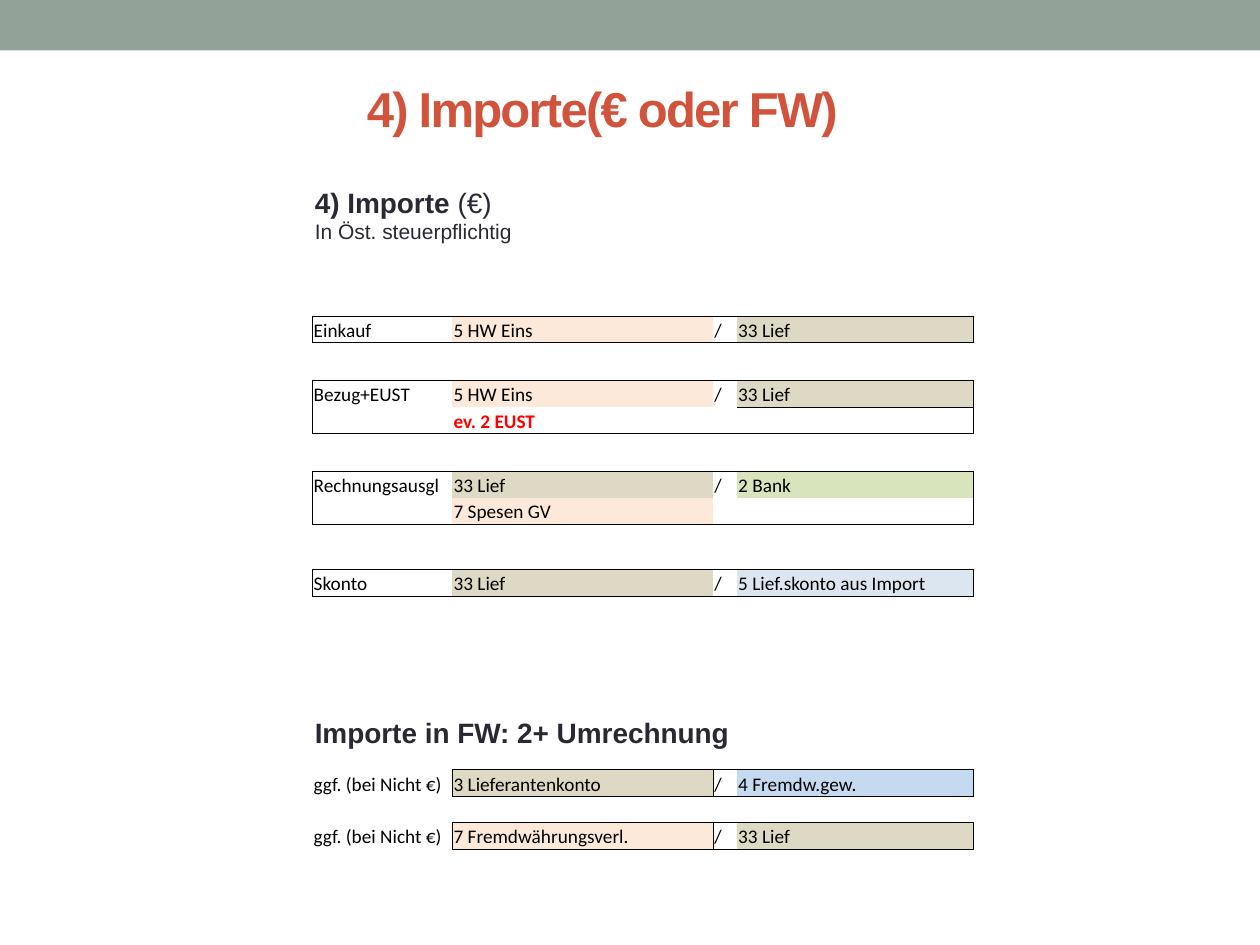
from dataclasses import dataclass

import lxml.etree
import pptx
import pptx.dml.color
import pptx.enum.shapes
import pptx.enum.text
import pptx.oxml.ns
import pptx.util

Inches = pptx.util.Inches
RGBColor = pptx.dml.color.RGBColor
qn = pptx.oxml.ns.qn

SAGE = RGBColor(0x93, 0xA2, 0x99)
RUST = RGBColor(0xD2, 0x53, 0x3C)
INK = RGBColor(0x29, 0x29, 0x34)
BLACK = RGBColor(0, 0, 0)
RED = RGBColor(0xFF, 0, 0)
PEACH = RGBColor(0xFD, 0xE9, 0xD9)
SAND = RGBColor(0xDD, 0xD9, 0xC4)
GREEN = RGBColor(0xD8, 0xE4, 0xBC)
PALE_BLUE = RGBColor(0xDC, 0xE6, 0xF1)
BLUE = RGBColor(0xC5, 0xD9, 0xF1)

COLUMNS = (1.11, 2.07, 0.19, 1.88)
ROW_HEIGHT = 0.21
TABLE_LEFT = 2.48
NO_STYLE = "{2D5ABB26-0587-4C30-8999-92F81FD0307C}"


@dataclass
class Entry:
    text: str = ""
    fill: RGBColor | None = None
    color: RGBColor = BLACK
    bold: bool = False
    underline: bool = False


@dataclass
class Box:
    first_row: int
    last_row: int
    first_col: int = 0

    def sides(self, row: int, col: int) -> set[str]:
        if not self.first_row <= row <= self.last_row or col < self.first_col:
            return set()
        edges = {
            "L": col == self.first_col,
            "R": col == len(COLUMNS) - 1,
            "T": row == self.first_row,
            "B": row == self.last_row,
        }
        return {side for side, on_edge in edges.items() if on_edge}


@dataclass
class Posting:
    top: float
    rows: list[list[Entry]]
    boxes: list[Box]


def booking(label: str, debit: Entry, credit: Entry) -> list[Entry]:
    return [Entry(label), debit, Entry("/"), credit]


def second_line(debit: Entry) -> list[Entry]:
    return [Entry(), debit, Entry(), Entry()]


SUPPLIER = Entry("33 Lief", SAND)
PURCHASE = Entry("5 HW Eins", PEACH)
FOREIGN = "ggf. (bei Nicht €)"

POSTINGS = [
    Posting(2.51, [booking("Einkauf", PURCHASE, SUPPLIER)], [Box(0, 0)]),
    Posting(3.02, [
        booking("Bezug+EUST", PURCHASE, Entry("33 Lief", SAND, underline=True)),
        second_line(Entry("ev. 2 EUST", color=RED, bold=True)),
    ], [Box(0, 1)]),
    Posting(3.74, [
        booking("Rechnungsausgl", SUPPLIER, Entry("2 Bank", GREEN)),
        second_line(Entry("7 Spesen GV", PEACH)),
    ], [Box(0, 1)]),
    Posting(4.52, [
        booking("Skonto", SUPPLIER, Entry("5 Lief.skonto aus Import", PALE_BLUE)),
    ], [Box(0, 0)]),
    Posting(6.11, [
        booking(FOREIGN, Entry("3 Lieferantenkonto", SAND), Entry("4 Fremdw.gew.", BLUE)),
        second_line(Entry()),
        booking(FOREIGN, Entry("7 Fremdwährungsverl.", PEACH), SUPPLIER),
    ], [Box(0, 0, 1), Box(2, 2, 1)]),
]


def write(p, text: str, *, size: float, color: RGBColor = INK, bold: bool = False,
          font: str = "Arial", spacing: int = 0) -> None:
    if not text:
        lxml.etree.SubElement(p._p, qn("a:endParaRPr"), sz=str(int(size * 100)))
        return
    r = p.add_run()
    r.text = text
    r.font.name = font
    r.font.size = pptx.util.Pt(size)
    r.font.bold = bold
    r.font.color.rgb = color
    if spacing:
        r.font._element.set("spc", str(spacing))


def add_box(s, left: float, top: float, width: float, height: float, wrap: bool = True):
    sp = s.shapes.add_textbox(Inches(left), Inches(top), Inches(width), Inches(height))
    tf = sp.text_frame
    tf.word_wrap = wrap
    return tf


def draw_borders(cell, sides: set[str]) -> None:
    tc_pr = cell._tc.get_or_add_tcPr()
    for side in "LRTB":
        if side in sides:
            line = lxml.etree.SubElement(tc_pr, qn(f"a:ln{side}"), w=str(pptx.util.Pt(0.5)))
            fill = lxml.etree.SubElement(line, qn("a:solidFill"))
            lxml.etree.SubElement(fill, qn("a:srgbClr"), val=str(BLACK))


def fill_cell(cell, entry: Entry, sides: set[str]) -> None:
    draw_borders(cell, sides)
    if entry.fill is None:
        cell.fill.background()
    else:
        cell.fill.solid()
        cell.fill.fore_color.rgb = entry.fill
    cell.margin_left = cell.margin_right = cell.margin_top = Inches(0.01)
    cell.margin_bottom = Inches(0)
    cell.vertical_anchor = pptx.enum.text.MSO_ANCHOR.BOTTOM
    write(cell.text_frame.paragraphs[0], entry.text, size=11, color=entry.color,
          bold=entry.bold, font="Calibri")


def add_posting(s, posting: Posting) -> None:
    count = len(posting.rows)
    table = s.shapes.add_table(
        count, len(COLUMNS), Inches(TABLE_LEFT), Inches(posting.top),
        Inches(sum(COLUMNS)), Inches(ROW_HEIGHT * count)).table
    table.first_row = table.horz_banding = False
    table._tbl.tblPr.find(qn("a:tableStyleId")).text = NO_STYLE
    for column, width in zip(table.columns, COLUMNS):
        column.width = Inches(width)
    for row, entries in enumerate(posting.rows):
        table.rows[row].height = Inches(ROW_HEIGHT)
        for col, entry in enumerate(entries):
            sides = set().union(*(box.sides(row, col) for box in posting.boxes))
            if entry.underline:
                sides.add("B")
            fill_cell(table.cell(row, col), entry, sides)


def main() -> None:
    """Build the slide on booking imports in euros and foreign currency."""
    prs = pptx.Presentation()
    prs.slide_width, prs.slide_height = Inches(10), Inches(7.5)
    s = prs.slides.add_slide(prs.slide_layouts[6])

    band = s.shapes.add_shape(pptx.enum.shapes.MSO_SHAPE.RECTANGLE,
                              Inches(0), Inches(0), Inches(10), Inches(0.4))
    band.shadow.inherit = False
    band.fill.solid()
    band.fill.fore_color.rgb = SAGE
    band.line.fill.background()

    for posting in POSTINGS:
        add_posting(s, posting)

    tf = add_box(s, 0.09, 0.5, 9.38, 0.72)
    tf.vertical_anchor = pptx.enum.text.MSO_ANCHOR.MIDDLE
    p = tf.paragraphs[0]
    p.alignment = pptx.enum.text.PP_ALIGN.CENTER
    write(p, "4) Importe(€ oder FW)", size=28, color=RUST, bold=True, spacing=-100)

    tf = add_box(s, 2.4, 1.42, 4.16, 0.57)
    p = tf.paragraphs[0]
    write(p, "4) Importe ", size=16, bold=True)
    write(p, "(€)", size=16)
    write(tf.add_paragraph(), "In Öst. steuerpflichtig", size=12)

    tf = add_box(s, 2.4, 5.63, 3.53, 0.37, wrap=False)
    write(tf.paragraphs[0], "Importe in FW: 2+ Umrechnung", size=16, bold=True)

    prs.save("out.pptx")


if __name__ == "__main__":
    main()
